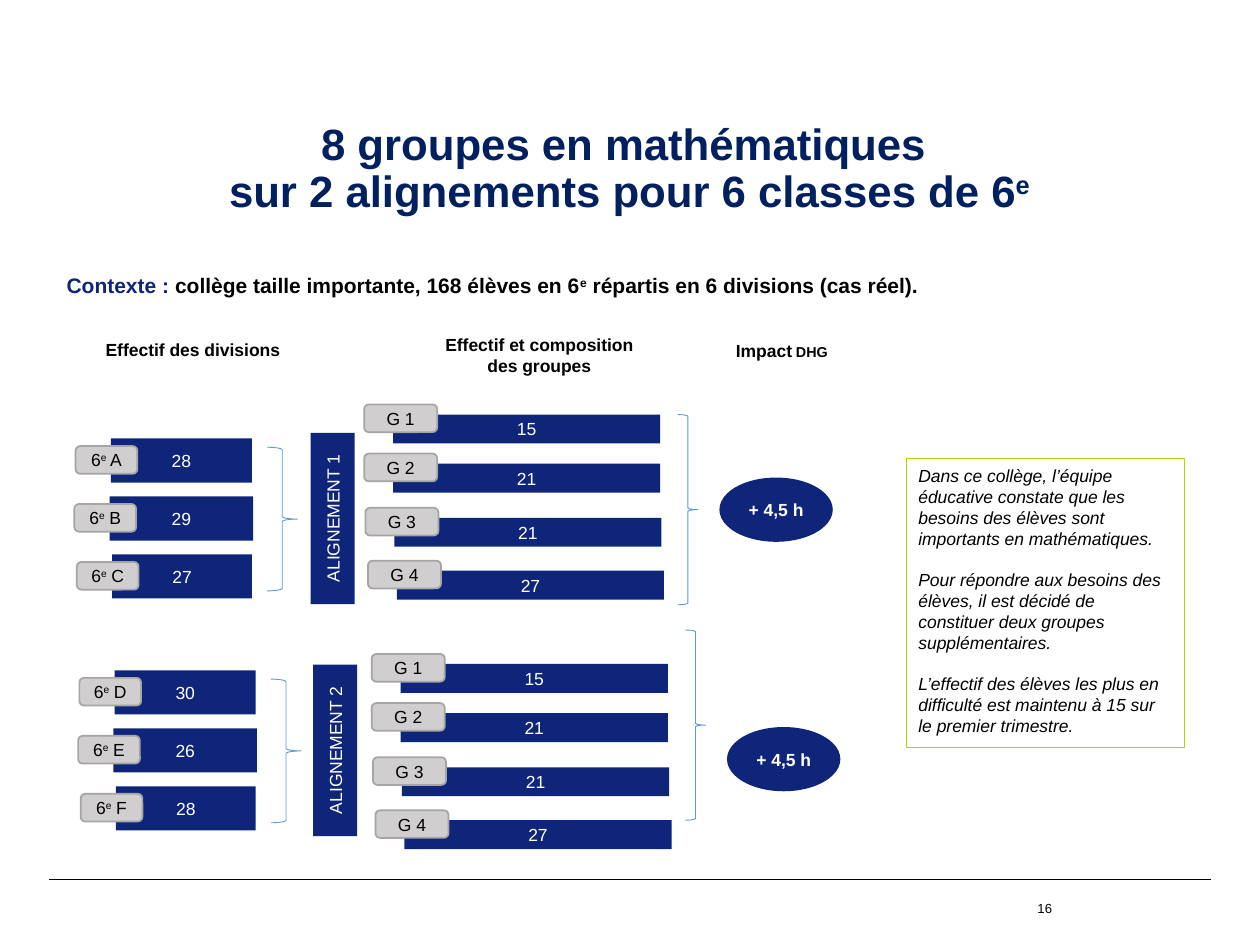
from dataclasses import dataclass

from pptx import Presentation
from pptx.dml.color import RGBColor
from pptx.enum.shapes import MSO_CONNECTOR, MSO_SHAPE
from pptx.enum.text import MSO_ANCHOR, MSO_AUTO_SIZE, PP_ALIGN
from pptx.oxml.ns import qn
from pptx.util import Inches, Pt
from lxml import etree

RECT, ROUNDED = MSO_SHAPE.RECTANGLE, MSO_SHAPE.ROUNDED_RECTANGLE
OVAL, BRACE = MSO_SHAPE.OVAL, MSO_SHAPE.RIGHT_BRACE
STRAIGHT = MSO_CONNECTOR.STRAIGHT
TOP, MIDDLE = MSO_ANCHOR.TOP, MSO_ANCHOR.MIDDLE
LEFT, CENTER, RIGHT = PP_ALIGN.LEFT, PP_ALIGN.CENTER, PP_ALIGN.RIGHT
NO_AUTOFIT = MSO_AUTO_SIZE.NONE


@dataclass(frozen=True)
class Theme:
    """Fonts, colours and type sizes of the slide."""
    font: str = "Arial"
    title: str = "002060"
    navy: str = "0E2579"
    black: str = "000000"
    white: str = "FFFFFF"
    tag: str = "D0CECE"
    tag_line: str = "A5A5A5"
    brace: str = "5B9BD5"
    note: str = "BCCF00"
    title_size: float = 25
    context_size: float = 12
    body_size: float = 10
    small_size: float = 8.2
    number_size: float = 7.5


class Deck:
    """Holds the theme and the current slide and draws each kind of element."""

    def __init__(self, prs, theme):
        self.theme = theme
        self.s = prs.slides.add_slide(prs.slide_layouts[5])

    def add_runs(self, p, runs, size=None, color=None, **style):
        """Add (text, overrides) runs to a paragraph."""
        base = {"size": size or self.theme.body_size,
                "color": color or self.theme.black, **style}
        for text, changes in runs:
            look = {**base, **changes}
            r = p.add_run()
            r.text = text
            r.font.name = self.theme.font
            r.font.size = Pt(look["size"])
            r.font.bold = look.get("bold", False)
            r.font.italic = look.get("italic", False)
            r.font.color.rgb = RGBColor.from_string(look["color"])
            if look.get("raised"):
                r.font._element.set("baseline", "30000")

    def title(self, box, lines):
        """Place the title and fill in its lines."""
        sp = self.s.shapes.title
        sp.left, sp.top, sp.width, sp.height = map(Inches, box)
        tf = sp.text_frame
        tf.word_wrap, tf.auto_size = True, NO_AUTOFIT
        tf.vertical_anchor = TOP
        p = tf.paragraphs[0]
        p.alignment, p.line_spacing = CENTER, 0.9
        for i, runs in enumerate(lines):
            if i:
                p.add_line_break()
            self.add_runs(p, runs, self.theme.title_size, self.theme.title, bold=True)

    def text(self, box, runs, align=CENTER, anchor=TOP, spacing=None, margin=None, **style):
        """Add a one-paragraph text box."""
        tf = self.s.shapes.add_textbox(*map(Inches, box)).text_frame
        tf.word_wrap, tf.vertical_anchor = True, anchor
        if margin is not None:
            tf.margin_left = tf.margin_right = Inches(margin)
            tf.margin_top = tf.margin_bottom = Inches(margin)
        p = tf.paragraphs[0]
        p.alignment, p.line_spacing = align, spacing
        self.add_runs(p, runs, **style)

    def shape(self, kind, box, runs=(), fill=None, line=None, width=1, into=None, **style):
        """Add a preset shape with centred text."""
        sp = (into or self.s).shapes.add_shape(kind, *map(Inches, box))
        sp.shadow.inherit = False
        if fill:
            sp.fill.solid()
            sp.fill.fore_color.rgb = RGBColor.from_string(fill)
        else:
            sp.fill.background()
        if line:
            sp.line.color.rgb = RGBColor.from_string(line)
            sp.line.width = Pt(width)
        else:
            sp.line.fill.background()
        tf = sp.text_frame
        tf.word_wrap, tf.vertical_anchor = False, MIDDLE
        p = tf.paragraphs[0]
        p.alignment = CENTER
        self.add_runs(p, runs, **style)
        return sp

    def tagged_bar(self, bar, tag, value, label, into=None):
        """Add a headcount bar with its name tag."""
        t = self.theme
        self.shape(RECT, bar, [(value, {})], t.navy, into=into, color=t.white)
        self.shape(ROUNDED, tag, label, t.tag, t.tag_line, into=into)

    def group_bar(self, bar, tag, value, label):
        """Add a tagged bar as one grouped object."""
        self.tagged_bar(bar, tag, value, label, self.s.shapes.add_group_shape())

    def brace(self, box):
        """Add a thin right brace."""
        self.shape(BRACE, box, line=self.theme.brace, width=0.5)

    def note(self, box, paragraphs):
        """Add the framed commentary."""
        sp = self.shape(RECT, box, line=self.theme.note, width=0.25)
        tf = sp.text_frame
        tf.word_wrap, tf.vertical_anchor = True, TOP
        for i, text in enumerate(paragraphs):
            p = tf.add_paragraph() if i else tf.paragraphs[0]
            p.alignment = LEFT
            if i:
                p.space_before = Pt(11.5)
            self.add_runs(p, [(text, {})], italic=True)

    def rule(self, x1, x2, y):
        """Add the horizontal footer line."""
        c = self.s.shapes.add_connector(STRAIGHT, *map(Inches, (x1, y, x2, y)))
        c.line.color.rgb = RGBColor.from_string(self.theme.black)
        c.line.width = Pt(0.8)
        etree.SubElement(c._element.spPr, qn("a:effectLst"))


DIVISIONS = [(0.88, 1.12), (0.87, 1.14), (0.89, 1.11)]
GROUPS = [(3.12, 3.29), (3.12, 3.68), (3.13, 4.11), (3.15, 4.53)]
ALIGNMENTS = [
    ("ALIGNEMENT 1", [("A", "28"), ("B", "29"), ("C", "27")]),
    ("ALIGNEMENT 2", [("D", "30"), ("E", "26"), ("F", "28")]),
]
GROUP_SIZES = ["15", "21", "21", "27"]
RAISED = {"raised": True}


def draw_alignment(deck, index, name, divisions):
    """Draw the divisions, groups and hours of one alignment."""
    t = deck.theme
    dx, dy = 0.03 * index, 1.84 * index
    for row, ((x, w), (letter, count)) in enumerate(zip(DIVISIONS, divisions)):
        x, y = x + dx, 3.48 + 0.46 * row + dy
        deck.tagged_bar((x, y, w, 0.35), (x - 0.28, y + 0.06, 0.49, 0.22), count,
                        [("6", {}), ("e", RAISED), (f" {letter}", {})])
    deck.brace((2.12 + dx, 3.55 + dy, 0.24, 1.14))
    label = deck.shape(RECT, (1.96 + 0.02 * index, 3.94 + dy, 1.36, 0.35),
                       [(name, {})], t.navy, color=t.white)
    label.rotation = 270

    dx, dy = 0.06 * index, 1.98 * index
    for number, ((x, y), count) in enumerate(zip(GROUPS, GROUP_SIZES), 1):
        x, y = x + dx, y + dy
        deck.group_bar((x, y, 2.12, 0.23), (x - 0.23, y - 0.08, 0.58, 0.22),
                       count, [(f"G {number}", {})])
    deck.brace((5.38 + dx, 3.29 + 1.71 * index, 0.16, 1.51))
    deck.shape(OVAL, (5.71 + dx, 3.79 + dy, 0.9, 0.51), [("+ 4,5 h", {})],
               t.navy, color=t.white, bold=True)


def main():
    """Build the slide and save it."""
    prs = Presentation()
    prs.slide_width, prs.slide_height = Inches(10), Inches(7.5)
    t = Theme()
    deck = Deck(prs, t)
    deck.rule(0.39, 9.61, 6.98)
    deck.title((1.45, 0.92, 7.09, 0.43), [
        [("8 groupes en mathématiques ", {})],
        [("sur 2 alignements pour 6 classes de 6", {}), ("e", RAISED)],
    ])
    deck.text((6.87, 6.95, 1.48, 0.52), [("16", {})], RIGHT, MIDDLE,
              margin=0, size=t.number_size)
    deck.text((0.43, 1.98, 7.48, 0.59), [
        ("Contexte : ", {"color": t.navy}),
        ("collège taille importante, 168 élèves en 6", {}), ("e", RAISED),
        (" répartis en 6 divisions (cas réel).", {}),
    ], LEFT, MIDDLE, 0.9, size=t.context_size, bold=True)
    for box, runs in [
        ((0.67, 2.64, 1.72, 0.27), [("Effectif des divisions", {})]),
        ((3.3, 2.6, 1.96, 0.44), [("Effectif et composition des groupes", {})]),
        ((5.47, 2.65, 1.47, 0.27), [("Impact", {}), (" DHG", {"size": t.small_size})]),
    ]:
        deck.text(box, runs, bold=True)
    for index, (name, divisions) in enumerate(ALIGNMENTS):
        draw_alignment(deck, index, name, divisions)
    deck.note((7.19, 3.64, 2.21, 2.29), [
        "Dans ce collège, l’équipe éducative constate que les besoins des élèves "
        "sont importants en mathématiques.",
        "Pour répondre aux besoins des élèves, il est décidé de constituer deux "
        "groupes supplémentaires.",
        "L’effectif des élèves les plus en difficulté est maintenu à 15 sur le "
        "premier trimestre.",
    ])
    prs.save("out.pptx")


if __name__ == "__main__":
    main()
